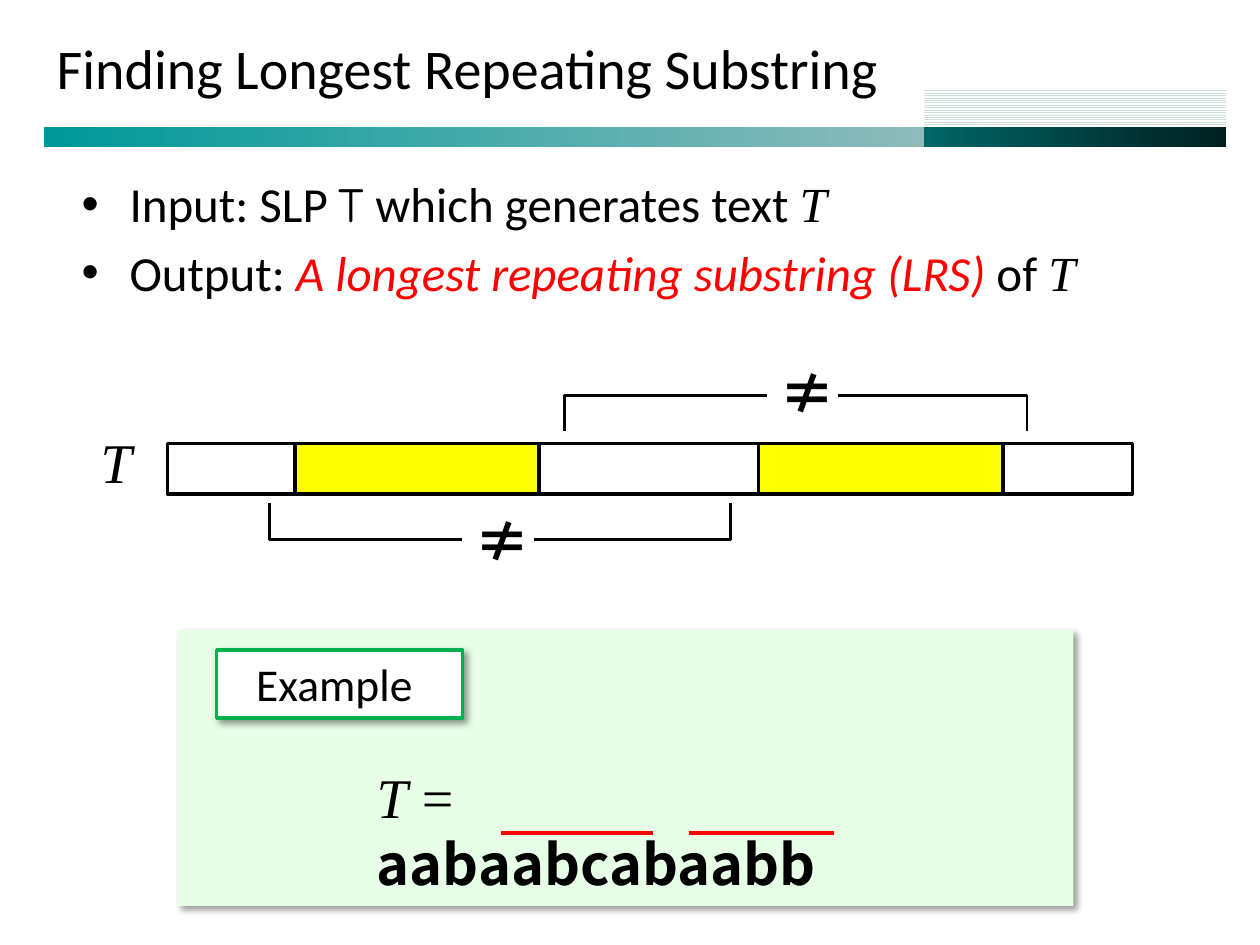
from lxml.etree import SubElement
from pptx import Presentation
from pptx.dml.color import RGBColor
from pptx.enum.dml import MSO_PATTERN
from pptx.enum.shapes import MSO_CONNECTOR, MSO_SHAPE
from pptx.enum.text import MSO_ANCHOR, MSO_AUTO_SIZE, PP_ALIGN
from pptx.oxml.ns import qn
from pptx.util import Inches, Pt

THEME = {
    "black": "000000", "white": "FFFFFF", "red": "FF0000",
    "yellow": "FFFF00", "green": "00B050", "pale_green": "E7FFE7",
    "teal": ("009999", "8FBBBB"), "dark_teal": ("006666", "001F1F"),
    "stripe": "CDDFD6",
    "body": "Calibri", "math": "Times New Roman",
    "script": "Comic Neue", "symbol": "Noto Sans CJK KR",
    "title_size": 32, "body_size": 28, "label_size": 26, "math_size": 32,
}

# Text runs are (text, font, colour, style), style being "", "i" or "b".
TITLE = "Finding Longest Repeating Substring"
MATH_T = ("T", "math", "black", "i")
BULLETS = [
    [("Input: SLP ", "body", "black", ""), ("T", "script", "black", ""),
     (" which generates text ", "body", "black", ""), MATH_T],
    [("Output: ", "body", "black", ""),
     ("A longest repeating substring (LRS)", "body", "red", "i"),
     (" of ", "body", "black", ""), MATH_T],
]
NOT_EQUAL = [("≠", "symbol", "black", "b")]
EXAMPLE_TEXT = [MATH_T, (" = ", "math", "black", ""),
                ("aabaabcabaabb", "symbol", "black", "b")]

BAR_TOP, BAR_HEIGHT = 3.52, 0.4
BAR_PARTS = [(1.33, 7.66, "white"), (2.34, 1.94, "yellow"), (6.02, 1.94, "yellow")]
# left, right, y of the open ends, y of the long side, left and top of the sign
BRACKETS = [(2.14, 5.8, 3.99, 4.28, 3.67, 3.97),
            (4.48, 8.15, 3.42, 3.14, 6.09, 2.8)]
OVERLINES = [(3.98, 5.18), (5.47, 6.62)]
OVERLINE_Y = 6.61


def rgb(name):
    return RGBColor.from_string(THEME.get(name, name))


def add_box(shapes, box, fill, line=None, line_width=2):
    shape = shapes.add_shape(MSO_SHAPE.RECTANGLE, *map(Inches, box))
    shape.shadow.inherit = False
    shape.fill.solid()
    shape.fill.fore_color.rgb = rgb(fill)
    if line:
        shape.line.color.rgb = rgb(line)
        shape.line.width = Pt(line_width)
    else:
        shape.line.fill.background()
    return shape


def add_gradient_bar(shapes, box, colours):
    shape = add_box(shapes, box, colours[0])
    shape.fill.gradient()
    shape.fill.gradient_angle = 0
    for stop, colour in zip(shape.fill.gradient_stops, colours):
        stop.color.rgb = rgb(colour)


def add_drop_shadow(shape):
    effects = shape._element.spPr.find(qn("a:effectLst"))
    shadow = SubElement(effects, qn("a:outerShdw"), blurRad=str(Pt(4)),
                        dist=str(Pt(3)), dir="2700000", algn="tl", rotWithShape="0")
    colour = SubElement(shadow, qn("a:srgbClr"), val=THEME["black"])
    SubElement(colour, qn("a:alpha"), val="40000")


def fill_paragraph(paragraph, runs, size):
    paragraph.font.size = Pt(size)
    for text, font, colour, style in runs:
        run = paragraph.add_run()
        run.text = text
        run.font.name = THEME[font]
        run.font.color.rgb = rgb(colour)
        run.font.italic = style == "i"
        run.font.bold = style == "b"
        if font == "symbol":
            SubElement(run.font._element, qn("a:ea"), typeface=THEME[font])


def set_text(shape, runs, size, wrap=False, align=PP_ALIGN.LEFT):
    frame = shape.text_frame
    frame.word_wrap = wrap
    frame.auto_size = MSO_AUTO_SIZE.SHAPE_TO_FIT_TEXT
    frame.vertical_anchor = MSO_ANCHOR.TOP
    frame.paragraphs[0].alignment = align
    fill_paragraph(frame.paragraphs[0], runs, size)


def add_text(shapes, box, runs, size, wrap=False):
    set_text(shapes.add_textbox(*map(Inches, box)), runs, size, wrap)


def add_header(slide):
    add_gradient_bar(slide.shapes, (0.35, 1.01, 6.98, 0.16), THEME["teal"])
    stripes = add_box(slide.shapes, (7.33, 0.7, 2.4, 0.3), "white")
    stripes.fill.patterned()
    stripes.fill.pattern = MSO_PATTERN.NARROW_HORIZONTAL
    stripes.fill.fore_color.rgb = rgb("stripe")
    stripes.fill.back_color.rgb = rgb("white")
    add_gradient_bar(slide.shapes, (7.33, 1.01, 2.4, 0.16), THEME["dark_teal"])

    title = slide.shapes.title
    title.left, title.top, title.width, title.height = map(
        Inches, (0.35, 0.13, 9.38, 0.81))
    title.text_frame.auto_size = MSO_AUTO_SIZE.NONE
    title.text_frame.vertical_anchor = MSO_ANCHOR.MIDDLE
    paragraph = title.text_frame.paragraphs[0]
    paragraph.alignment = PP_ALIGN.LEFT
    fill_paragraph(paragraph, [(TITLE, "body", "black", "")], THEME["title_size"])


def add_bullets(slide):
    frame = slide.shapes.add_textbox(*map(Inches, (0.55, 1.33, 9, 1.41))).text_frame
    frame.word_wrap = True
    for index, runs in enumerate(BULLETS):
        paragraph = frame.add_paragraph() if index else frame.paragraphs[0]
        properties = paragraph._p.get_or_add_pPr()
        properties.set("marL", str(Inches(0.38)))
        properties.set("indent", str(Inches(-0.38)))
        if index:
            paragraph.space_before = Pt(0.2 * THEME["body_size"])
        colour = SubElement(properties, qn("a:buClr"))
        SubElement(colour, qn("a:srgbClr"), val=THEME["black"])
        SubElement(properties, qn("a:buFont"), typeface="Arial")
        SubElement(properties, qn("a:buChar"), char="•")
        fill_paragraph(paragraph, runs, THEME["body_size"])


def add_text_diagram(slide):
    shapes = slide.shapes
    for left, width, fill in BAR_PARTS:
        add_box(shapes, (left, BAR_TOP, width, BAR_HEIGHT), fill, "black")
    add_text(shapes, (0.7, 3.34, 0.45, 0.64), [MATH_T], THEME["math_size"])
    for left, right, end_y, side_y, sign_left, sign_top in BRACKETS:
        builder = shapes.build_freeform(Inches(left), Inches(end_y))
        corners = [(left, side_y), (right, side_y), (right, end_y)]
        builder.add_line_segments(
            [(Inches(x), Inches(y)) for x, y in corners], close=False)
        bracket = builder.convert_to_shape()
        bracket.shadow.inherit = False
        bracket.fill.background()
        bracket.line.color.rgb = rgb("black")
        bracket.line.width = Pt(1.5)
        sign = add_box(shapes, (sign_left, sign_top, 0.56, 0.64), "white", "white", 0.75)
        set_text(sign, NOT_EQUAL, THEME["math_size"])


def add_example(slide):
    group = slide.shapes.add_group_shape()
    add_drop_shadow(add_box(group.shapes, (1.41, 5, 7.11, 2.19), "pale_green"))
    add_text(group.shapes, (2.89, 6, 4.11, 0.64), EXAMPLE_TEXT,
             THEME["math_size"], wrap=True)
    label = add_box(group.shapes, (1.72, 5.16, 1.95, 0.54), "white", "green")
    add_drop_shadow(label)
    set_text(label, [("Example ", "body", "black", "")], THEME["label_size"],
             wrap=True, align=PP_ALIGN.CENTER)
    for start, end in OVERLINES:
        line = slide.shapes.add_connector(
            MSO_CONNECTOR.STRAIGHT, Inches(start), Inches(OVERLINE_Y),
            Inches(end), Inches(OVERLINE_Y))
        line.line.color.rgb = rgb("red")
        line.line.width = Pt(2.25)
        SubElement(line._element.spPr, qn("a:effectLst"))


def main():
    presentation = Presentation()
    presentation.slide_width, presentation.slide_height = Inches(10), Inches(7.5)
    slide = presentation.slides.add_slide(presentation.slide_layouts[5])
    add_header(slide)
    add_bullets(slide)
    add_text_diagram(slide)
    add_example(slide)
    presentation.save("out.pptx")


if __name__ == "__main__":
    main()
